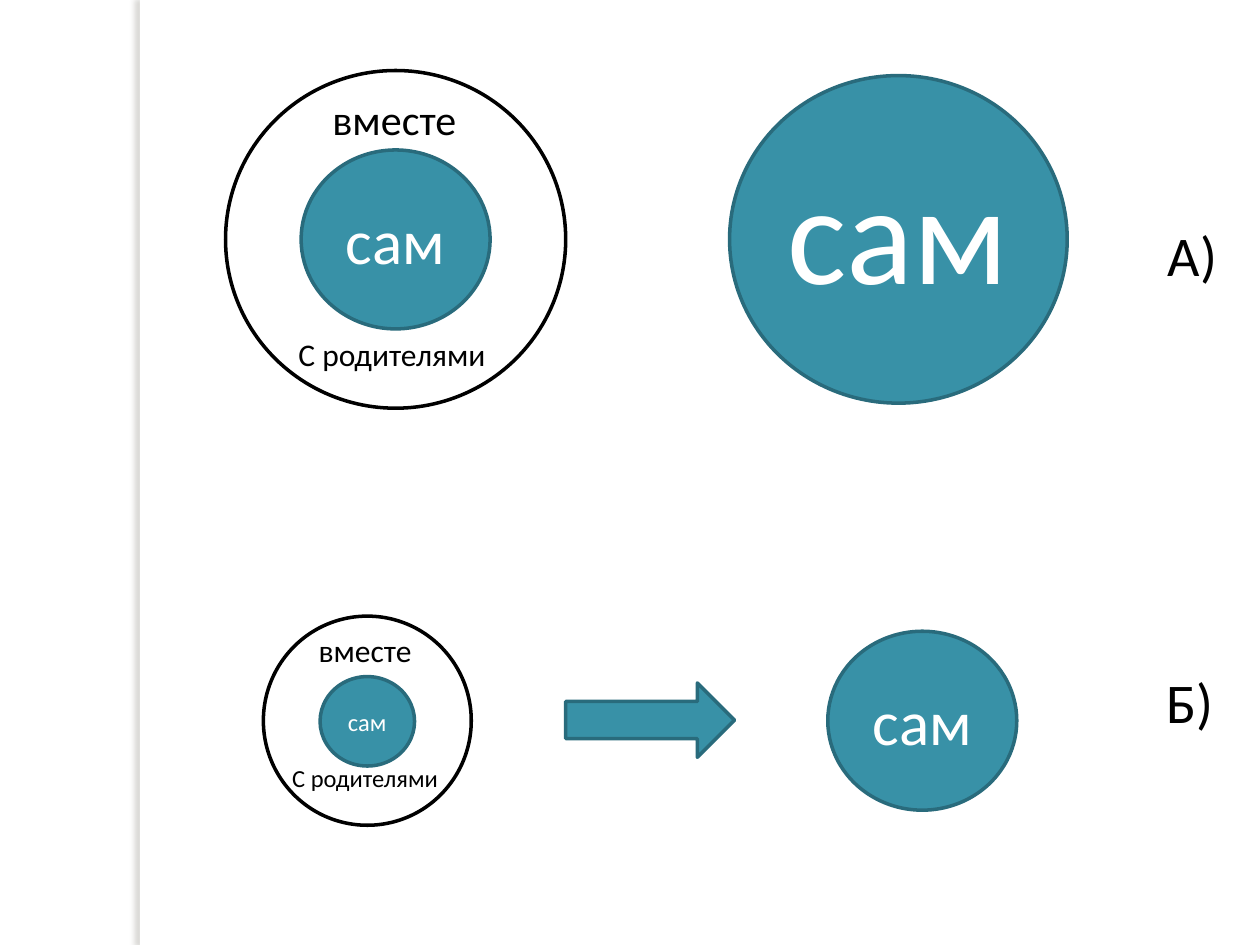
from dataclasses import dataclass

from lxml import etree
from pptx import Presentation
from pptx.dml.color import RGBColor
from pptx.enum.shapes import MSO_SHAPE
from pptx.enum.text import MSO_ANCHOR, MSO_AUTO_SIZE, PP_ALIGN
from pptx.oxml.ns import qn
from pptx.util import Inches, Pt

RECTANGLE = MSO_SHAPE.RECTANGLE
CIRCLE = MSO_SHAPE.FLOWCHART_CONNECTOR
ARROW = MSO_SHAPE.RIGHT_ARROW
MIDDLE = MSO_ANCHOR.MIDDLE
CENTER = PP_ALIGN.CENTER
GROW = MSO_AUTO_SIZE.SHAPE_TO_FIT_TEXT
BLANK_LAYOUT = 6


@dataclass(frozen=True)
class Theme:
    """Colours, font and type sizes of the slide."""

    teal: str = "3891A7"
    teal_edge: str = "296B7C"
    white: str = "FFFFFF"
    black: str = "000000"
    shadow: str = "736F63"
    font: str = "Calibri"
    line: int = 2
    huge: int = 80
    large: int = 36
    label: int = 32
    medium: int = 24
    small: int = 18
    tiny: int = 14


THEME = Theme()


def style_text(paragraph, text, size, color):
    """Write text into a paragraph with the theme font."""
    paragraph.text = text
    paragraph.font.name = THEME.font
    paragraph.font.size = Pt(size)
    paragraph.font.color.rgb = RGBColor.from_string(color)


def add_figure(slide, kind, box, fill=THEME.teal, edge=THEME.teal_edge):
    """Add a filled preset shape, outlined when an edge colour is given."""
    shape = slide.shapes.add_shape(kind, *map(Inches, box))
    shape.shadow.inherit = False
    shape.fill.solid()
    shape.fill.fore_color.rgb = RGBColor.from_string(fill)
    if edge:
        shape.line.color.rgb = RGBColor.from_string(edge)
        shape.line.width = Pt(THEME.line)
    else:
        shape.line.fill.background()
    return shape


def add_self_circle(slide, box, size):
    """Add a teal circle with its centred word."""
    frame = add_figure(slide, CIRCLE, box).text_frame
    frame.margin_left = frame.margin_right = 0
    frame.vertical_anchor = MIDDLE
    paragraph = frame.paragraphs[0]
    paragraph.alignment = CENTER
    style_text(paragraph, "сам", size, THEME.white)


def add_label(slide, text, box, size, color=THEME.black):
    """Add a one-line text box that fits its text."""
    frame = slide.shapes.add_textbox(*map(Inches, box)).text_frame
    frame.word_wrap = False
    frame.auto_size = GROW
    style_text(frame.paragraphs[0], text, size, color)


def add_side_strip(slide):
    """Add the narrow vertical strip that casts a shadow to the left."""
    strip = add_figure(slide, RECTANGLE, (1.11, 0, 0.08, 7.5), THEME.white, None)
    effects = strip.fill._xPr.find(qn("a:effectLst"))
    shadow = etree.SubElement(
        effects, qn("a:outerShdw"),
        blurRad=str(Pt(3)), dist=str(Pt(3)), dir="10800000", rotWithShape="0",
    )
    color = etree.SubElement(shadow, qn("a:srgbClr"), val=THEME.shadow)
    etree.SubElement(color, qn("a:alpha"), val="25000")


def add_nested_circles(slide, outer, inner, upper, lower, sizes):
    """Add the ring of shared activity around the inner circle."""
    inner_size, upper_size, lower_size = sizes
    add_figure(slide, CIRCLE, outer, THEME.white, THEME.black)
    add_self_circle(slide, inner, inner_size)
    add_label(slide, "вместе", upper, upper_size)
    add_label(slide, "С родителями", lower, lower_size)


def main():
    """Build and save the slide."""
    presentation = Presentation()
    presentation.slide_width = Inches(10)
    presentation.slide_height = Inches(7.5)
    slide = presentation.slides.add_slide(presentation.slide_layouts[BLANK_LAYOUT])

    add_side_strip(slide)
    add_figure(slide, CIRCLE, (5.79, 0.6, 2.68, 2.6))
    add_self_circle(slide, (6.57, 5.01, 1.5, 1.42), THEME.large)
    add_label(slide, "сам", (6.15, 1.1, 1.96, 1.45), THEME.huge, THEME.white)
    add_label(slide, "А)", (9.17, 1.7, 0.62, 0.64), THEME.label)
    add_label(slide, "Б)", (9.16, 5.25, 0.61, 0.64), THEME.label)
    add_figure(slide, ARROW, (4.49, 5.42, 1.34, 0.59))
    add_nested_circles(
        slide,
        outer=(1.79, 0.56, 2.7, 2.68),
        inner=(2.39, 1.19, 1.5, 1.42),
        upper=(2.54, 0.69, 1.2, 0.5),
        lower=(2.27, 2.61, 1.74, 0.4),
        sizes=(THEME.large, THEME.medium, THEME.small),
    )
    add_nested_circles(
        slide,
        outer=(2.09, 4.89, 1.65, 1.66),
        inner=(2.54, 5.37, 0.75, 0.71),
        upper=(2.43, 4.96, 0.96, 0.4),
        lower=(2.22, 6.01, 1.39, 0.34),
        sizes=(THEME.tiny, THEME.small, THEME.tiny),
    )
    presentation.save("out.pptx")


if __name__ == "__main__":
    main()
